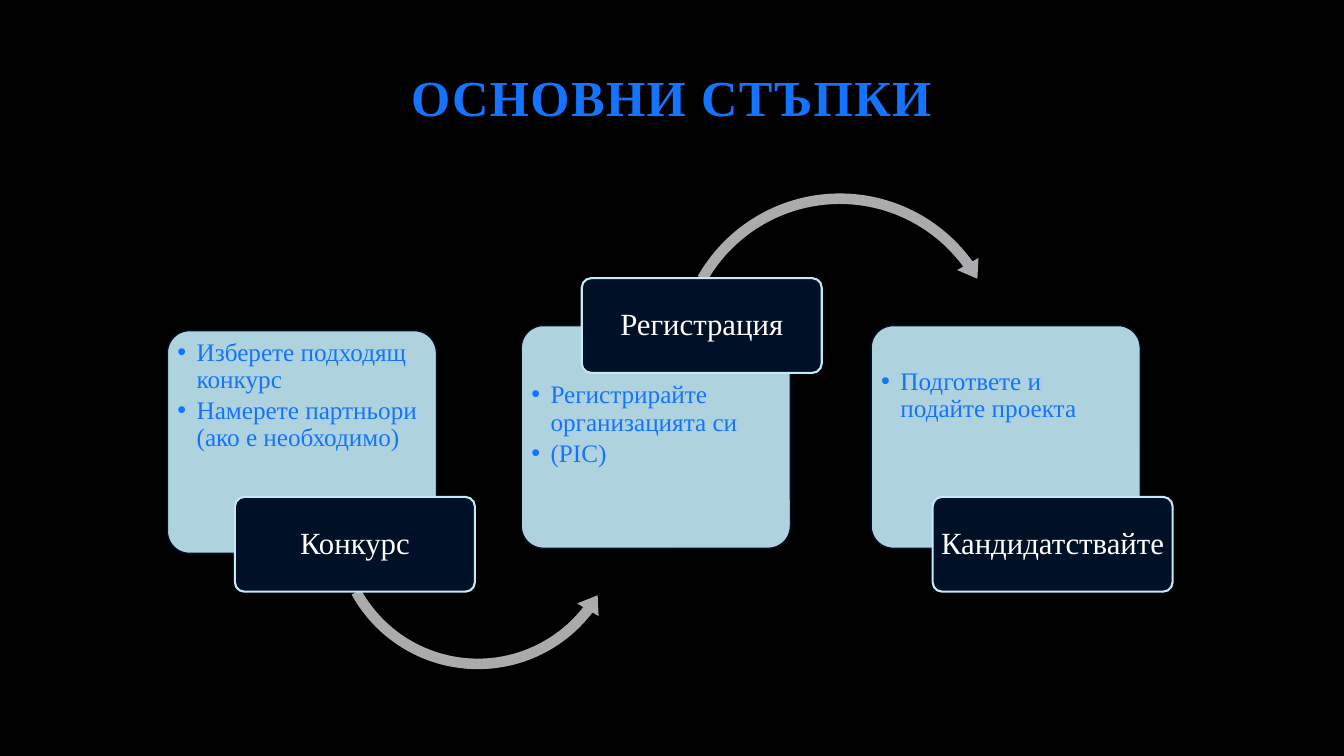
import pptx
import pptx.util
import pptx.dml.color
import pptx.enum.shapes
import pptx.enum.text
import pptx.oxml.ns
import lxml.etree
from dataclasses import dataclass

PX = 9144  # EMU per px, 100 px to the inch
COMPARISON_LAYOUT = 4
SHAPES = pptx.enum.shapes.MSO_SHAPE
ANCHORS = pptx.enum.text.MSO_ANCHOR
ALIGNMENTS = pptx.enum.text.PP_ALIGN


@dataclass(frozen=True)
class Theme:
    font: str = "Times New Roman"
    background: str = "000000"
    accent: str = "1474FF"
    card: str = "C1EBF7"
    label: str = "001027"
    label_text: str = "FFFFFF"
    arrow: str = "ABABAD"
    title_size: int = 36
    list_size: int = 18
    label_size: int = 22


THEME = Theme()

# Card left and top, list top and height, label left and top, label, list
STEPS = [
    (166, 328, 333, 163, 233, 493, "Конкурс",
     ["Изберете подходящ конкурс", "Намерете партньори (ако е необходимо)"]),
    (517, 323, 375, 163, 577, 276, "Регистрация",
     ["Регистрирайте организацията си", "(PIC)"]),
    (864, 323, 362, 134, 925, 493, "Кандидатствайте",
     ["Подгответе и подайте проекта"]),
]

# Kind, left, top, size, then thickness, head angle, end angle, start angle, head width
ARROWS = [
    (SHAPES.LEFT_CIRCULAR_ARROW, 324, 371, 300, (0.035, 7.23, 37.59, 151.17, 0.041)),
    (SHAPES.CIRCULAR_ARROW, 664, 185, 338, (0.031, 6.36, 324.05, 209.59, 0.036)),
]


def px(length):
    return pptx.util.Emu(length * PX)


def color(value):
    return pptx.dml.color.RGBColor.from_string(value)


def place(shape, left, top, width, height):
    shape.left, shape.top = px(left), px(top)
    shape.width, shape.height = px(width), px(height)


def set_frame(frame, anchor, side, end):
    frame.word_wrap = True
    frame.auto_size = pptx.enum.text.MSO_AUTO_SIZE.NONE
    frame.vertical_anchor = anchor
    frame.margin_left = frame.margin_right = px(side)
    frame.margin_top = frame.margin_bottom = px(end)


def write(paragraph, text, size, text_color, alignment, bold=False):
    paragraph.alignment = alignment
    paragraph.line_spacing = 0.9
    paragraph.space_before = pptx.util.Pt(0)
    run = paragraph.add_run()
    run.text = text
    run.font.name = THEME.font
    run.font.size = pptx.util.Pt(size)
    run.font.bold = bold
    run.font.color.rgb = color(text_color)
    return run


def add_bullet(paragraph):
    properties = paragraph._p.get_or_add_pPr()
    properties.set("marL", str(px(19)))
    properties.set("indent", str(px(-19)))
    for tag, name, value in (("a:buFont", "typeface", "Arial"), ("a:buChar", "char", "•")):
        element = lxml.etree.SubElement(properties, pptx.oxml.ns.qn(tag))
        element.set(name, value)


def add_panel(slide, kind, box, fill, line=None, line_width=1):
    shape = slide.shapes.add_shape(kind, *map(px, box))
    shape.shadow.inherit = False
    shape.fill.solid()
    shape.fill.fore_color.rgb = color(fill)
    if line:
        shape.line.color.rgb = color(line)
        shape.line.width = pptx.util.Pt(line_width)
    else:
        shape.line.fill.background()
    return shape


def add_card(slide, left, top):
    card = add_panel(slide, SHAPES.ROUNDED_RECTANGLE, (left, top, 267, 221),
                     THEME.card, THEME.label)
    card.adjustments[0] = 0.1
    fill_color = card._element.spPr.find(
        pptx.oxml.ns.qn("a:solidFill") + "/" + pptx.oxml.ns.qn("a:srgbClr"))
    alpha = lxml.etree.SubElement(fill_color, pptx.oxml.ns.qn("a:alpha"))
    alpha.set("val", "90000")


def fill_list(slide, placeholder, box, items):
    slide.shapes._spTree.append(placeholder._element)  # bring in front of its card
    place(placeholder, *box)
    frame = placeholder.text_frame
    set_frame(frame, ANCHORS.TOP, 4, 4)
    for index, item in enumerate(items):
        paragraph = frame.add_paragraph() if index else frame.paragraphs[0]
        add_bullet(paragraph)
        paragraph.space_after = pptx.util.Pt(2.7)
        write(paragraph, item, THEME.list_size, THEME.accent, ALIGNMENTS.LEFT)


def add_arrow(slide, kind, left, top, size, geometry):
    arrow = add_panel(slide, kind, (left, top, size, size), THEME.arrow)
    thickness, *angles, head = geometry
    # One degree is 60000 units, and an adjustment of 1 is 100000 units
    values = [thickness, *(angle * 0.6 for angle in angles), head]
    for index, value in enumerate(values):
        arrow.adjustments[index] = value


def add_label(slide, left, top, text):
    label = add_panel(slide, SHAPES.ROUNDED_RECTANGLE, (left, top, 238, 94),
                      THEME.label, THEME.card, 1.5)
    label.adjustments[0] = 0.1
    set_frame(label.text_frame, ANCHORS.MIDDLE, 5, 3)
    write(label.text_frame.paragraphs[0], text, THEME.label_size,
          THEME.label_text, ALIGNMENTS.CENTER)


def fill_title(title, text):
    place(title, 166, 42, 1000, 89)
    set_frame(title.text_frame, ANCHORS.BOTTOM, 10, 5)
    run = write(title.text_frame.paragraphs[0], text, THEME.title_size,
                THEME.accent, ALIGNMENTS.CENTER, bold=True)
    run.font._element.set("spc", "100")


def main():
    presentation = pptx.Presentation()
    presentation.slide_width, presentation.slide_height = px(1333), px(750)
    slide = presentation.slides.add_slide(presentation.slide_layouts[COMPARISON_LAYOUT])
    slide.background.fill.solid()
    slide.background.fill.fore_color.rgb = color(THEME.background)

    # Title and the three list placeholders
    title, *lists, spare = list(slide.placeholders)
    spare._element.getparent().remove(spare._element)
    fill_title(title, "ОСНОВНИ СТЪПКИ")

    # Steps, each with a card, a list, an arrow to the next step and a label
    for index, step in enumerate(STEPS):
        left, top, list_top, list_height, label_left, label_top, label, items = step
        add_card(slide, left, top)
        fill_list(slide, lists[index], (left + 6, list_top, 257, list_height), items)
        if index < len(ARROWS):
            add_arrow(slide, *ARROWS[index])
        add_label(slide, label_left, label_top, label)

    presentation.save("out.pptx")


if __name__ == "__main__":
    main()
